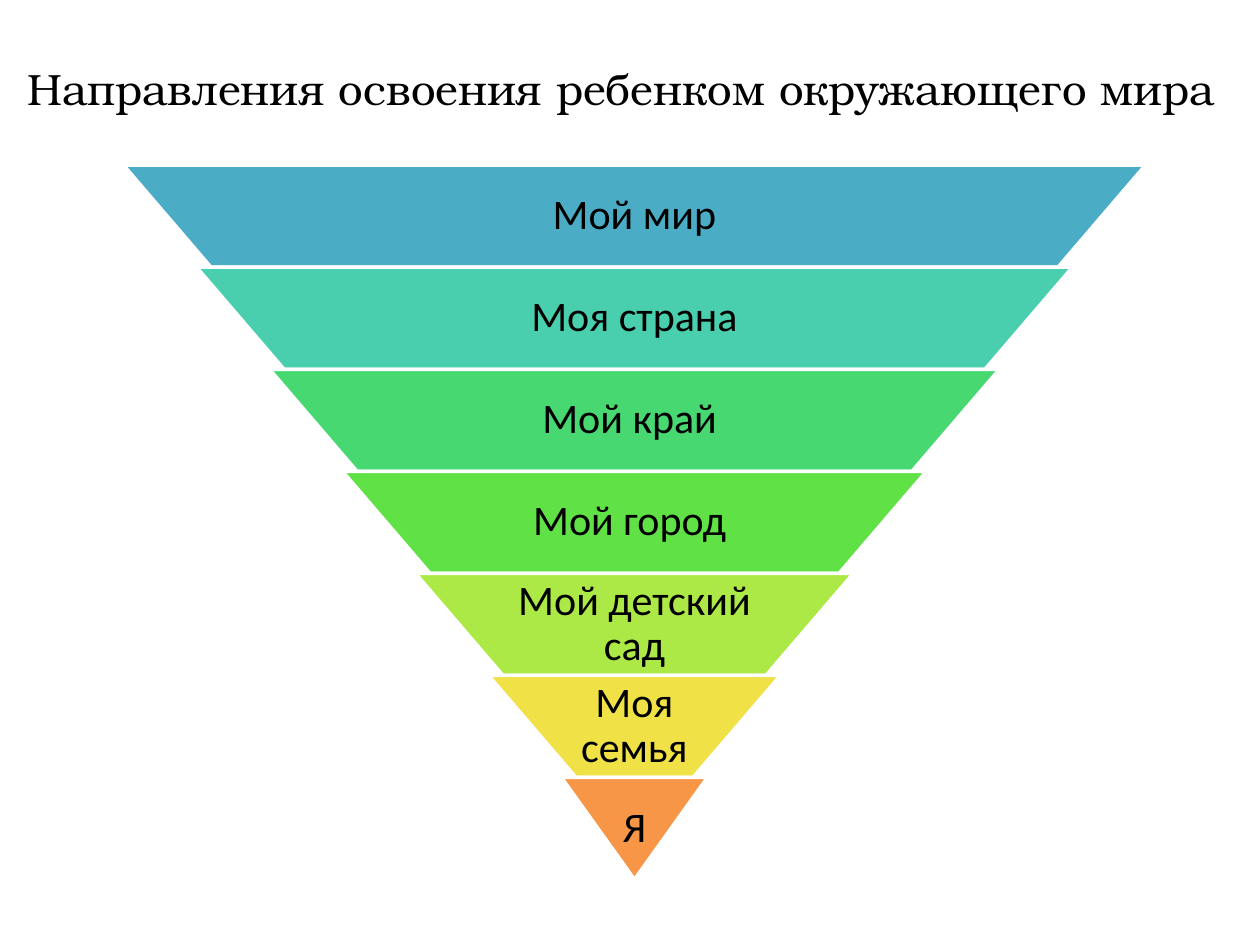
from dataclasses import dataclass

from pptx import Presentation
from pptx.dml.color import RGBColor
from pptx.enum.shapes import MSO_SHAPE
from pptx.enum.text import MSO_ANCHOR, PP_ALIGN
from pptx.util import Cm, Pt

TRAPEZOID = MSO_SHAPE.TRAPEZOID
MIDDLE = MSO_ANCHOR.MIDDLE
CENTER = PP_ALIGN.CENTER
LEFT = PP_ALIGN.LEFT

LEVELS = [
    ("Мой мир", "4BACC6"),
    ("Моя страна", "49CFAE"),
    ("Мой край ", "47D872"),
    ("Мой город ", "60E146"),
    ("Мой детский сад", "ACE946"),
    ("Моя семья", "F0E146"),
    ("Я", "F79646"),
]

# Pyramid geometry in centimetres
CENTER_X = 12.79
PYRAMID_TOP = 3.33
PYRAMID_WIDTH = 20.6
PYRAMID_HEIGHT = 14.4
LABEL_SHARE = 0.65
SIDE_SLOPE = 0.857


@dataclass
class Theme:
    text: str = "000000"
    outline: str = "FFFFFF"
    outline_width: float = 2
    title_font: str = "TeX Gyre Bonum"
    title_size: float = 25
    label_font: str = "Calibri"
    label_size: float = 24


class SlideBuilder:
    def __init__(self, slide, theme):
        self.slide = slide
        self.theme = theme
        self.pyramid = slide.shapes.add_group_shape()

    def set_text(self, box, text, font_name, size, align):
        box.text_frame.word_wrap = True
        line = box.text_frame.paragraphs[0]
        line.text = text
        line.alignment = align
        line.font.name = font_name
        line.font.size = Pt(size)
        line.font.color.rgb = RGBColor.from_string(self.theme.text)
        return line

    def title(self, text, left, top, width, height):
        box = self.slide.shapes.add_textbox(Cm(left), Cm(top), Cm(width), Cm(height))
        self.set_text(box, text, self.theme.title_font, self.theme.title_size, LEFT)

    def band(self, top, width, height, color):
        """Draw one upside-down trapezoid centred on the pyramid axis."""
        band = self.pyramid.shapes.add_shape(
            TRAPEZOID, Cm(CENTER_X - width / 2), Cm(top), Cm(width), Cm(height))
        band.adjustments[0] = SIDE_SLOPE
        band.rotation = 180
        band.shadow.inherit = False
        band.fill.solid()
        band.fill.fore_color.rgb = RGBColor.from_string(color)
        band.line.color.rgb = RGBColor.from_string(self.theme.outline)
        band.line.width = Pt(self.theme.outline_width)

    def label(self, text, top, width, height):
        box = self.pyramid.shapes.add_textbox(
            Cm(CENTER_X - width / 2), Cm(top), Cm(width), Cm(height))
        frame = box.text_frame
        frame.vertical_anchor = MIDDLE
        frame.margin_left = frame.margin_right = Cm(0.08)
        frame.margin_top = frame.margin_bottom = Cm(0.08)
        line = self.set_text(box, text, self.theme.label_font, self.theme.label_size, CENTER)
        line.line_spacing = 0.9


def main():
    deck = Presentation()
    deck.slide_width = Cm(25.4)
    deck.slide_height = Cm(19.05)
    builder = SlideBuilder(deck.slides.add_slide(deck.slide_layouts[6]), Theme())

    count = len(LEVELS)
    height = PYRAMID_HEIGHT / count
    for index, (name, color) in enumerate(LEVELS):
        top = PYRAMID_TOP + index * height
        width = PYRAMID_WIDTH * (count - index) / count
        is_tip = index == count - 1
        builder.band(top, width, height, color)
        builder.label(name, top, width if is_tip else width * LABEL_SHARE, height)

    builder.title("Направления освоения ребенком окружающего мира", 0.3, 1.12, 24.69, 1.32)
    deck.save("out.pptx")


if __name__ == "__main__":
    main()
